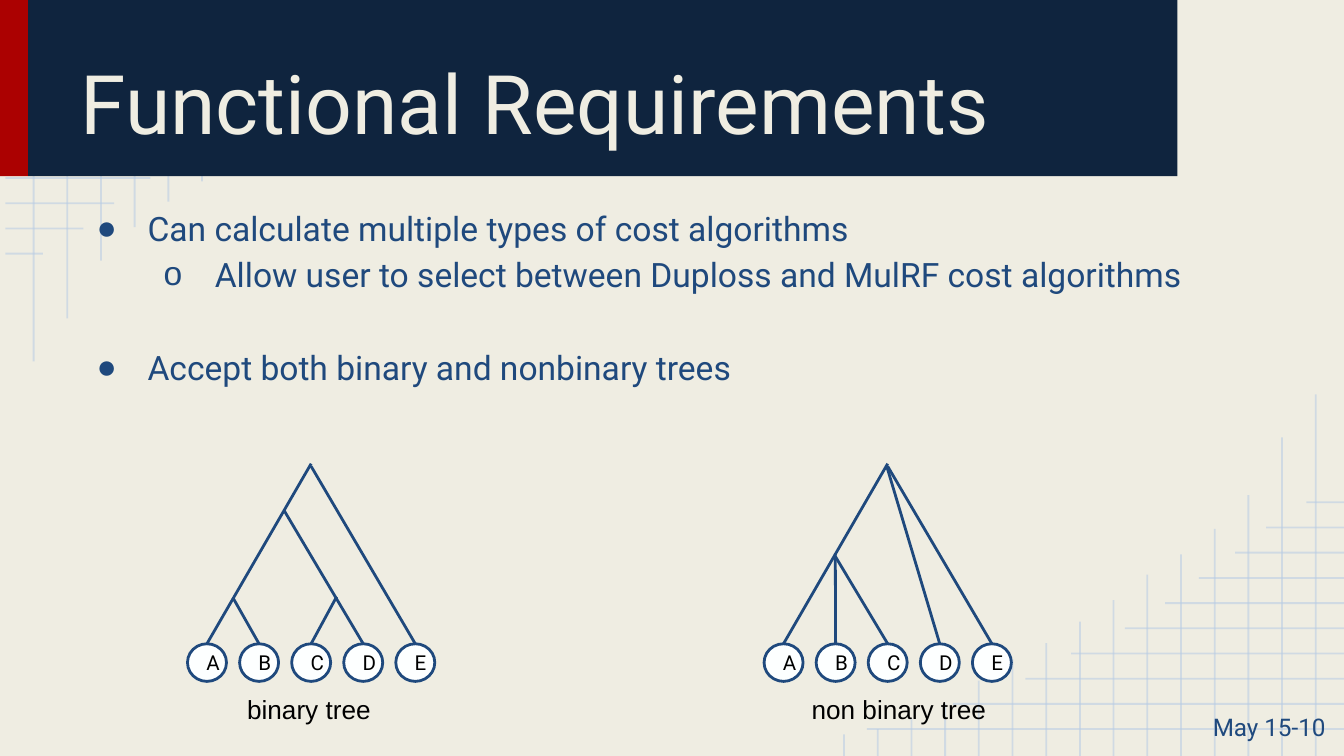
import dataclasses

import lxml.etree
import pptx
import pptx.dml.color
import pptx.enum.shapes
import pptx.enum.text
import pptx.oxml
import pptx.oxml.ns
import pptx.util

Inches = pptx.util.Inches
Pt = pptx.util.Pt
RGBColor = pptx.dml.color.RGBColor
Align = pptx.enum.text.PP_ALIGN
Anchor = pptx.enum.text.MSO_ANCHOR
Shape = pptx.enum.shapes.MSO_SHAPE
qn = pptx.oxml.ns.qn

CREAM = RGBColor(0xEF, 0xED, 0xE2)
NAVY = RGBColor(0x0F, 0x24, 0x3E)
RED = RGBColor(0xAB, 0x01, 0x01)
BLUE = RGBColor(0x1F, 0x49, 0x7D)
GRID_BLUE = RGBColor(0xB7, 0xCC, 0xE4)
LEAF_WHITE = RGBColor(0xFD, 0xFF, 0xFF)
BLACK = RGBColor(0, 0, 0)

WIDTH, HEIGHT = 10, 5.625
LEAF_TOP, LEAF_WIDTH, LEAF_HEIGHT, LEAF_PITCH = 4.79, 0.29, 0.28, 0.3875

# Far ends of the corner grid lines, in order from the slide's edge
ROW_ENDS = (3.59, 2.95, 2.41, 2.07, 1.67, 1.37, 1.12, 0.85, 0.62, 0.32)
COLUMN_ENDS = (2.69, 2.37, 1.94, 1.69, 1.5, 1.35, 1.16, 1.0,
               0.84, 0.72, 0.56, 0.39, 0.28, 0.2, 0.16)


@dataclasses.dataclass
class Branch:
    leaf: str
    x: float  # upper end, measured from the tree's left edge
    y: float


@dataclasses.dataclass
class Tree:
    left: float
    branches: tuple[Branch, ...]
    caption: str
    caption_left: float


@dataclasses.dataclass
class Bullet:
    text: str
    level: int
    symbol: str
    space_before: int = 0


TREES = (
    Tree(1.395, (Branch("A", 0.92, 3.45), Branch("B", 0.34, 4.45),
                 Branch("E", 0.92, 3.47), Branch("C", 1.11, 4.44),
                 Branch("D", 0.72, 3.8)), "binary tree", 1.74),
    Tree(5.685, (Branch("A", 0.92, 3.45), Branch("B", 0.53, 4.12),
                 Branch("E", 0.92, 3.47), Branch("C", 0.53, 4.14),
                 Branch("D", 0.91, 3.46)), "non binary tree", 5.94),
)

BULLETS = (
    Bullet("Can calculate multiple types of cost algorithms", 0, "●"),
    Bullet("Allow user to select between Duploss and MulRF cost algorithms", 1, "o"),
    Bullet("Accept both binary and nonbinary trees", 0, "●", 25),
)


def style_text(frame, size: float, color: RGBColor, font: str = "Roboto",
               align=Align.LEFT, anchor=Anchor.TOP) -> None:
    frame.word_wrap = True
    frame.auto_size = pptx.enum.text.MSO_AUTO_SIZE.NONE
    frame.vertical_anchor = anchor
    frame.margin_left = frame.margin_right = Inches(0.1)
    frame.margin_top = frame.margin_bottom = Inches(0.1)
    for paragraph in frame.paragraphs:
        paragraph.alignment = align
        for run in paragraph.runs:
            run.font.size = Pt(size)
            run.font.name = font
            run.font.color.rgb = color


def add_text(slide, text: str, left: float, top: float, width: float,
             height: float, size: float, color: RGBColor, **style) -> None:
    box = slide.shapes.add_textbox(
        Inches(left), Inches(top), Inches(width), Inches(height))
    box.text_frame.text = text
    style_text(box.text_frame, size, color, **style)


def add_line(slide, x1: float, y1: float, x2: float, y2: float,
             color: RGBColor, width: float):
    line = slide.shapes.add_connector(
        pptx.enum.shapes.MSO_CONNECTOR.STRAIGHT,
        Inches(x1), Inches(y1), Inches(x2), Inches(y2))
    line.line.color.rgb = color
    line.line.width = Pt(width)
    lxml.etree.SubElement(line._element.spPr, qn("a:effectLst"))
    return line


def add_grid_line(slide, x1: float, y1: float, x2: float, y2: float) -> None:
    line = add_line(slide, x1, y1, x2, y2, GRID_BLUE, 1)
    tint = line._element.spPr.find(".//" + qn("a:srgbClr"))
    lxml.etree.SubElement(tint, qn("a:alpha"), val="54000")


def add_corner_grid(slide, turned: bool) -> None:
    rows = [(0.04, 0.2 + 0.1875 * i, end, 0.2 + 0.1875 * i)
            for i, end in enumerate(ROW_ENDS)]
    columns = [(0.25 + 0.2507 * i, end, 0.25 + 0.2507 * i, 0)
               for i, end in enumerate(COLUMN_ENDS)]
    for x1, y1, x2, y2 in rows + columns:
        if turned:
            x1, x2 = WIDTH + 0.04 - x1, WIDTH + 0.04 - x2
            y1, y2 = HEIGHT - y1, HEIGHT - y2
        add_grid_line(slide, x1, y1, x2, y2)


def add_filled(slide, kind, left: float, top: float, width: float,
               height: float, color: RGBColor):
    shape = slide.shapes.add_shape(
        kind, Inches(left), Inches(top), Inches(width), Inches(height))
    shape.shadow.inherit = False
    shape.fill.solid()
    shape.fill.fore_color.rgb = color
    shape.line.fill.background()
    return shape


def add_tree(slide, tree: Tree) -> None:
    leaves = {}
    for i, name in enumerate("ABCDE"):
        leaf = add_filled(slide, Shape.OVAL, tree.left + i * LEAF_PITCH,
                          LEAF_TOP, LEAF_WIDTH, LEAF_HEIGHT, LEAF_WHITE)
        leaf.line.color.rgb = BLUE
        leaf.line.width = Pt(1.5)
        leaf.text_frame.text = name
        style_text(leaf.text_frame, 11, BLACK,
                   align=Align.CENTER, anchor=Anchor.MIDDLE)
        leaves[name] = leaf
    for branch in tree.branches:
        x = tree.left + branch.x
        line = add_line(slide, x, LEAF_TOP, x, branch.y, BLUE, 1.5)
        line.begin_connect(leaves[branch.leaf], 0)
    add_text(slide, tree.caption, tree.caption_left, 5.06, 1.6, 0.24,
             14, BLACK, font="Arial")


def add_bullets(slide, bullets: tuple[Bullet, ...]) -> None:
    box = slide.shapes.add_textbox(Inches(0.5), Inches(1.4), Inches(9), Inches(3.97))
    frame = box.text_frame
    frame.text = "\n".join(bullet.text for bullet in bullets)
    style_text(frame, 18, BLUE)
    for paragraph, bullet in zip(frame.paragraphs, bullets):
        paragraph.level = bullet.level
        paragraph.line_spacing = 1.15
        paragraph.space_before = Pt(bullet.space_before)
        properties = paragraph._p.get_or_add_pPr()
        properties.set("marL", str(Inches(0.5 * (bullet.level + 1))))
        properties.set("indent", str(Inches(-0.38)))
        tint = lxml.etree.SubElement(properties, qn("a:buClr"))
        lxml.etree.SubElement(tint, qn("a:srgbClr"), val=str(BLUE))
        lxml.etree.SubElement(properties, qn("a:buFont"), typeface="Arial")
        lxml.etree.SubElement(properties, qn("a:buChar"), char=bullet.symbol)


def main() -> None:
    deck = pptx.Presentation()
    deck.slide_width, deck.slide_height = Inches(WIDTH), Inches(HEIGHT)
    slide = deck.slides.add_slide(deck.slide_layouts[5])
    slide.background.fill.solid()
    slide.background.fill.fore_color.rgb = CREAM

    # Corner grids and title banner
    add_corner_grid(slide, turned=False)
    add_corner_grid(slide, turned=True)
    add_filled(slide, Shape.RECTANGLE, 0, -0.01, 0.21, 1.32, RED)
    add_filled(slide, Shape.RECTANGLE, 0.21, -0.01, 8.55, 1.32, NAVY)

    # Title, brought in front of the banner
    title = slide.shapes.title
    title.left, title.top = Inches(0.5), Inches(0.11)
    title.width, title.height = Inches(8), Inches(1.11)
    title.text_frame.text = "Functional Requirements"
    style_text(title.text_frame, 44, CREAM, anchor=Anchor.BOTTOM)
    slide.shapes._spTree.append(title._element)

    # Requirements, date and example trees
    add_bullets(slide, BULLETS)
    add_text(slide, "May 15-10", 8.74, 5.19, 1.22, 0.43, 13, BLUE,
             align=Align.RIGHT, anchor=Anchor.MIDDLE)
    for tree in TREES:
        add_tree(slide, tree)

    deck.save("out.pptx")


if __name__ == "__main__":
    main()
